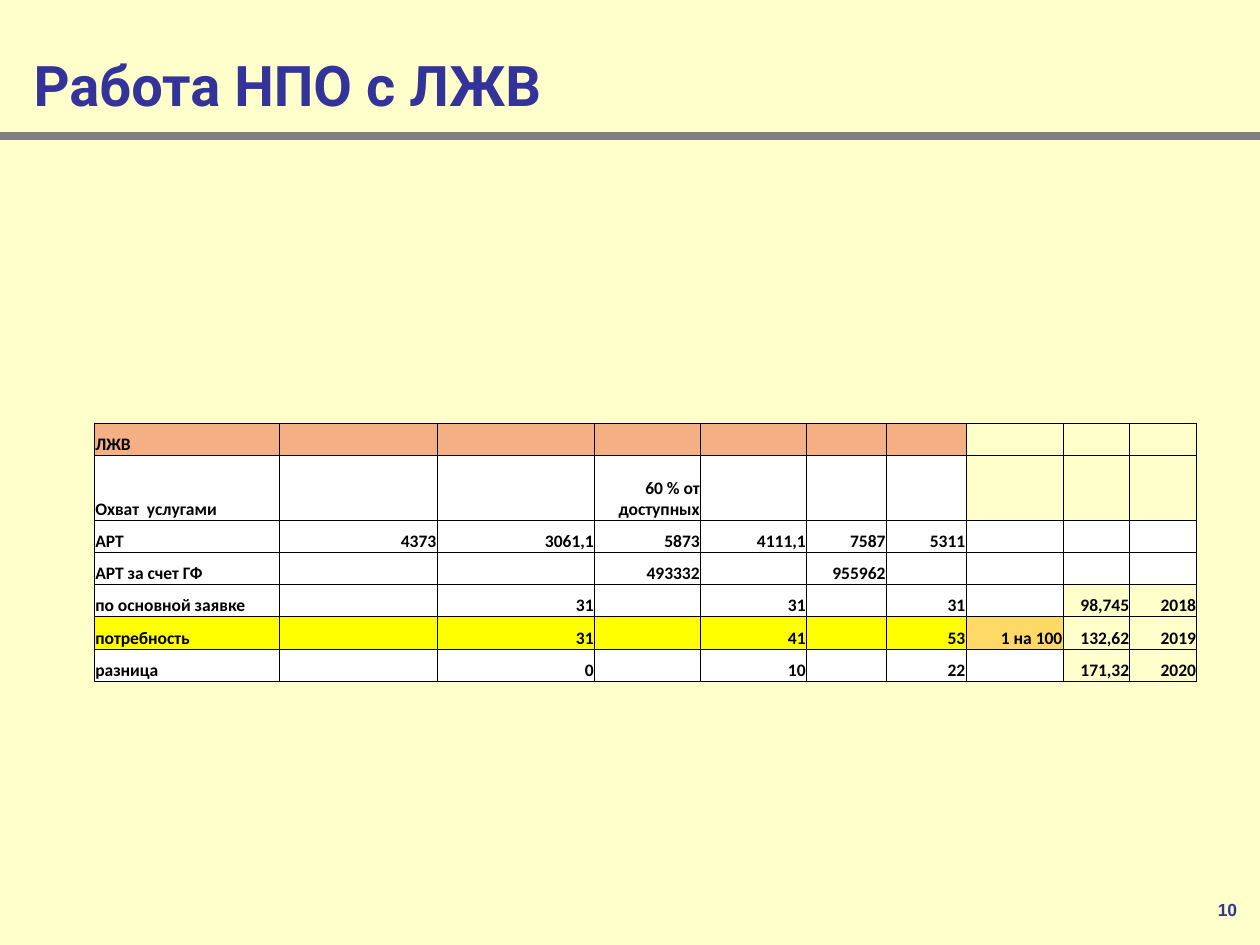
from lxml.etree import SubElement
from pptx import Presentation
from pptx.dml.color import RGBColor
from pptx.enum.text import MSO_ANCHOR, PP_ALIGN
from pptx.oxml.ns import qn
from pptx.util import Pt

COLORS = {
    "background": "FFFFCC", "rule": "808080", "heading": "333399", "text": "000000",
    "orange": "F4B084", "white": "FFFFFF", "yellow": "FFFF00", "gold": "FFD966",
}


def add_run(paragraph, text, font_name, size, color):
    run = paragraph.add_run()
    run.text = text
    run.font.name = font_name
    run.font.size = Pt(size)
    run.font.bold = True
    run.font.color.rgb = RGBColor.from_string(COLORS[color])


def add_borders(cell):
    properties = cell._tc.get_or_add_tcPr()
    for side in ("a:lnL", "a:lnR", "a:lnT", "a:lnB"):
        line = SubElement(properties, qn(side), w=str(Pt(0.5)))
        fill = SubElement(line, qn("a:solidFill"))
        SubElement(fill, qn("a:srgbClr"), val=COLORS["text"])


presentation = Presentation()
presentation.slide_width = Pt(720)
presentation.slide_height = Pt(540)
slide = presentation.slides.add_slide(presentation.slide_layouts[5])
slide.background.fill.solid()
slide.background.fill.fore_color.rgb = RGBColor.from_string(COLORS["background"])

# Rule under the title
rule = slide.shapes.add_connector(1, Pt(0), Pt(77.75), Pt(720), Pt(77.75))
rule.line.color.rgb = RGBColor.from_string(COLORS["rule"])
rule.line.width = Pt(4.5)
SubElement(rule._element.spPr, qn("a:effectLst"))

# Title
title = slide.shapes.title
title.left, title.top, title.width, title.height = Pt(12), Pt(24), Pt(630), Pt(48)
title.text_frame.vertical_anchor = MSO_ANCHOR.MIDDLE
paragraph = title.text_frame.paragraphs[0]
paragraph.alignment = PP_ALIGN.LEFT
add_run(paragraph, "Работа НПО с ЛЖВ", "Roboto", 32, "heading")

# Slide number
number = slide.shapes.add_textbox(Pt(546), Pt(510), Pt(168), Pt(19.5))
number.text_frame.word_wrap = True
paragraph = number.text_frame.paragraphs[0]
paragraph.alignment = PP_ALIGN.RIGHT
add_run(paragraph, "10", "Arial", 10, "heading")

# Table content: cell texts, then runs of fills as (colour, cell count)
rows = [
    (["ЛЖВ"] + [""] * 9, [("orange", 7), (None, 3)]),
    (["Охват  услугами", "", "", "60 % от доступных"] + [""] * 6,
     [("white", 7), (None, 3)]),
    (["АРТ", "4373", "3061,1", "5873", "4111,1", "7587", "5311", "", "", ""],
     [("white", 10)]),
    (["АРТ за счет ГФ", "", "", "493332", "", "955962", "", "", "", ""],
     [("white", 10)]),
    (["по основной заявке", "", "31", "", "31", "", "31", "", "98,745", "2018"],
     [("white", 8), (None, 2)]),
    (["потребность", "", "31", "", "41", "", "53", "1 на 100", "132,62", "2019"],
     [("yellow", 7), ("gold", 1), (None, 2)]),
    (["разница", "", "0", "", "10", "", "22", "", "171,32", "2020"],
     [("white", 8), (None, 2)]),
]
column_widths = [105.7, 90, 90, 60.6, 60.6, 45.6, 45.6, 55.5, 38.2, 38.2]
row_heights = [18.45, 36.9] + [18.45] * 5

# Table
frame = slide.shapes.add_table(len(rows), len(column_widths), Pt(54), Pt(241.8),
                               Pt(sum(column_widths)), Pt(sum(row_heights)))
table = frame.table
table.first_row = False
table.horz_banding = False
for column, width in zip(table.columns, column_widths):
    column.width = Pt(width)
for row, height in zip(table.rows, row_heights):
    row.height = Pt(height)

for row_index, (texts, fill_runs) in enumerate(rows):
    fills = [color for color, count in fill_runs for _ in range(count)]
    for column_index, (text, color) in enumerate(zip(texts, fills)):
        cell = table.cell(row_index, column_index)
        cell.vertical_anchor = MSO_ANCHOR.BOTTOM
        cell.margin_left = cell.margin_right = cell.margin_top = Pt(0.5)
        cell.margin_bottom = Pt(0)
        add_borders(cell)
        if color:
            cell.fill.solid()
            cell.fill.fore_color.rgb = RGBColor.from_string(COLORS[color])
        else:
            cell.fill.background()
        paragraph = cell.text_frame.paragraphs[0]
        paragraph.alignment = PP_ALIGN.RIGHT if column_index else PP_ALIGN.LEFT
        if text:
            add_run(paragraph, text, "Calibri", 10, "text")
        else:
            # Keeps empty cells from stretching their row
            SubElement(paragraph._p, qn("a:endParaRPr"), sz="1000")

presentation.save("out.pptx")
